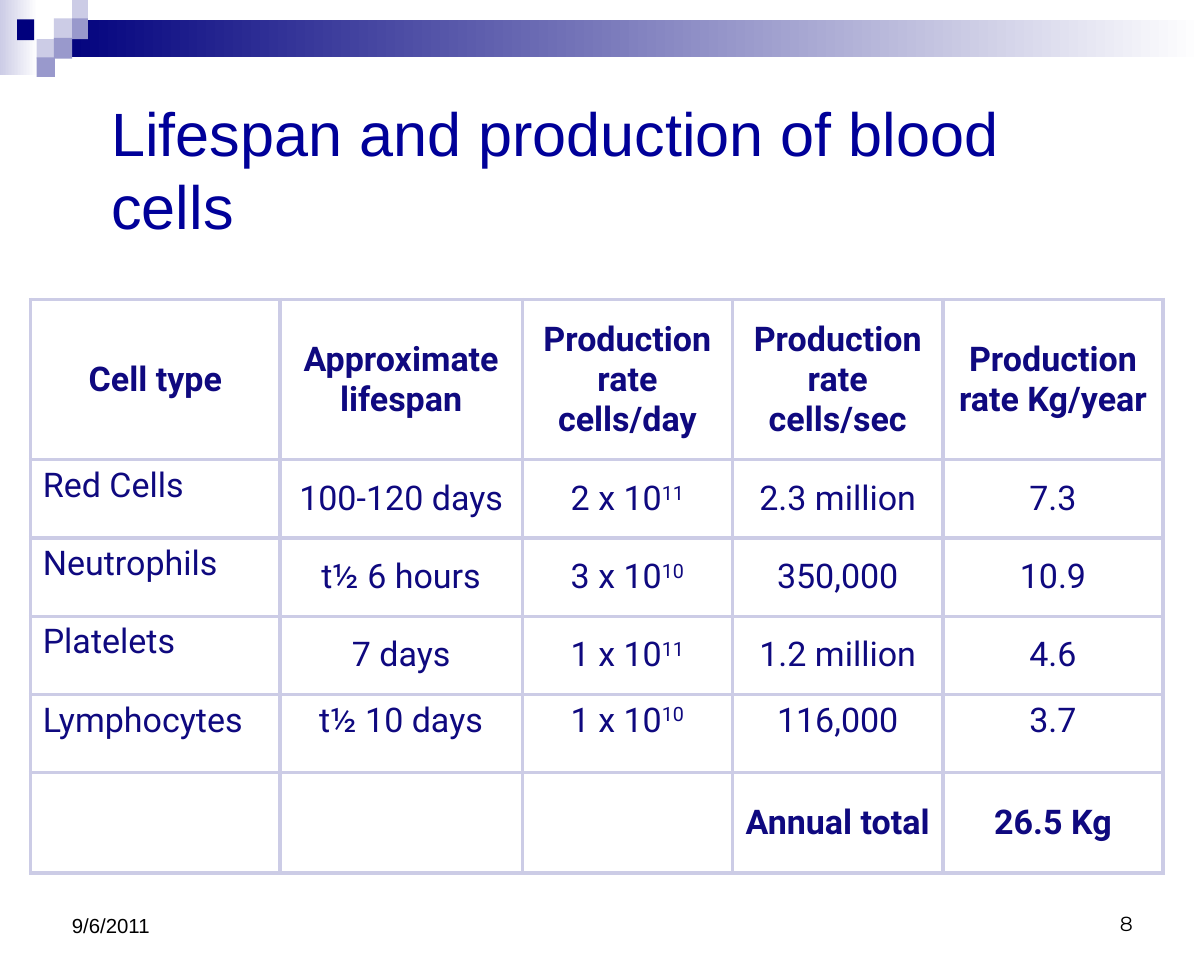
from typing import NamedTuple

from lxml.etree import SubElement
from pptx import Presentation
from pptx.dml.color import RGBColor
from pptx.enum.shapes import MSO_SHAPE as Shape
from pptx.enum.text import MSO_ANCHOR as Anchor, MSO_AUTO_SIZE as AutoSize, PP_ALIGN as Align
from pptx.oxml.ns import qn
from pptx.util import Inches, Pt

COLORS = {
    "navy": "00007D",
    "title": "000099",
    "table": "0F097F",
    "lilac": "CCCCE6",
    "violet": "9999CC",
    "white": "FFFFFF",
    "black": "000000",
}


class Block(NamedTuple):
    left: float
    top: float
    width: float
    height: float
    color: str
    fades: bool = False


class Footer(NamedTuple):
    text: str
    left: float
    top: float
    height: float
    font: str
    align: Align


BLOCKS = [
    Block(0, 0, 0.31, 0.61, "lilac", True),
    Block(0.44, 0.16, 9.4, 0.31, "navy", True),
    Block(0.44, 0.15, 0.15, 0.17, "lilac"),
    Block(0.59, 0, 0.13, 0.16, "lilac"),
    Block(0.59, 0.15, 0.13, 0.17, "violet"),
    Block(0.3, 0.32, 0.15, 0.16, "lilac"),
    Block(0.14, 0.16, 0.14, 0.17, "navy"),
    Block(0.44, 0.31, 0.15, 0.17, "violet"),
    Block(0.3, 0.47, 0.15, 0.16, "violet"),
]
FOOTERS = [
    Footer("8", 7.06, 7.18, 0.52, "Montserrat", Align.RIGHT),
    Footer("9/6/2011", 0.49, 7.17, 0.55, "Arial", Align.LEFT),
]
COLUMN_WIDTHS = [2.04, 1.98, 1.72, 1.72, 1.8]
ROW_HEIGHTS = [1.31, 0.64, 0.64, 0.64, 0.64, 0.82]
ROWS = [
    ["Cell type", "Approximate lifespan", "Production rate cells/day",
     "Production rate cells/sec", "Production rate Kg/year"],
    ["Red Cells", "100-120 days", "2 x 10^11", "2.3 million", "7.3"],
    ["Neutrophils", "t½ 6 hours", "3 x 10^10", "350,000", "10.9"],
    ["Platelets", "7 days", "1 x 10^11", "1.2 million", "4.6"],
    ["Lymphocytes", "t½ 10 days", "1 x 10^10", "116,000", "3.7"],
    ["", "", "", "Annual total", "26.5 Kg"],
]
HEADER_ROW, LYMPHOCYTE_ROW, TOTAL_ROW = 0, 4, 5


def rgb(name: str) -> RGBColor:
    return RGBColor.from_string(COLORS[name])


def write(holder, text: str, *, size: float, font: str, color: str,
          align=Align.LEFT, anchor=Anchor.TOP, bold: bool = False) -> None:
    holder.vertical_anchor = anchor
    holder.word_wrap = True
    frame = getattr(holder, "text_frame", holder)
    para = frame.paragraphs[0]
    para.alignment = align
    base, _, exponent = text.partition("^")
    for part in filter(None, (base, exponent)):
        span = para.add_run()
        span.text = part
        span.font.size = Pt(size)
        span.font.name = font
        span.font.bold = bold
        span.font.color.rgb = rgb(color)
    if exponent:
        span.font._element.set("baseline", "30000")


def draw_block(page, block: Block) -> None:
    box = page.shapes.add_shape(Shape.RECTANGLE, *map(Inches, block[:4]))
    box.shadow.inherit = False
    box.line.fill.background()
    if block.fades:
        box.fill.gradient()
        box.fill.gradient_angle = 0
        for stop, color in zip(box.fill.gradient_stops, (block.color, "white")):
            stop.color.rgb = rgb(color)
    else:
        box.fill.solid()
        box.fill.fore_color.rgb = rgb(block.color)


def draw_footer(page, footer: Footer) -> None:
    box = page.shapes.add_textbox(
        Inches(footer.left), Inches(footer.top), Inches(2.3), Inches(footer.height))
    write(box.text_frame, footer.text, size=12, font=footer.font, color="black",
          align=footer.align, anchor=Anchor.BOTTOM)


def draw_title(page, text: str) -> None:
    title = page.shapes.title
    title.left, title.top = Inches(0.81), Inches(0.84)
    title.width, title.height = Inches(8.39), Inches(1.08)
    title.text_frame.auto_size = AutoSize.NONE
    write(title.text_frame, text, size=36, font="Arial", color="title", anchor=Anchor.MIDDLE)


def add_borders(cell, color: str, width: float) -> None:
    properties = cell._tc.get_or_add_tcPr()
    for position, side in enumerate(("a:lnL", "a:lnR", "a:lnT", "a:lnB")):
        line = SubElement(properties, qn(side), w=str(Pt(width)))
        fill = SubElement(line, qn("a:solidFill"))
        SubElement(fill, qn("a:srgbClr"), val=COLORS[color])
        properties.remove(line)
        properties.insert(position, line)


def draw_table(page) -> None:
    table = page.shapes.add_table(
        len(ROWS), len(COLUMN_WIDTHS), Inches(0.25), Inches(2.45),
        Inches(sum(COLUMN_WIDTHS)), Inches(sum(ROW_HEIGHTS))).table
    table.horz_banding = False
    for column, width in zip(table.columns, COLUMN_WIDTHS):
        column.width = Inches(width)
    for row, height in zip(table.rows, ROW_HEIGHTS):
        row.height = Inches(height)
    for row, texts in enumerate(ROWS):
        emphasized = row in (HEADER_ROW, TOTAL_ROW)
        for column, text in enumerate(texts):
            cell = table.cell(row, column)
            cell.fill.background()
            add_borders(cell, "lilac", 2.25)
            is_label = column == 0 and not emphasized
            at_top = is_label or row == LYMPHOCYTE_ROW
            cell.vertical_anchor = Anchor.TOP if at_top else Anchor.MIDDLE
            write(cell.text_frame, text, size=20, font="Roboto", color="table",
                  align=Align.LEFT if is_label else Align.CENTER,
                  anchor=None, bold=emphasized)


def main() -> None:
    deck = Presentation()
    deck.slide_width, deck.slide_height = Inches(9 + 27 / 32), Inches(7 + 7 / 8)
    page = deck.slides.add_slide(deck.slide_layouts[5])
    page.background.fill.solid()
    page.background.fill.fore_color.rgb = rgb("white")
    for block in BLOCKS:
        draw_block(page, block)
    for footer in FOOTERS:
        draw_footer(page, footer)
    draw_title(page, "Lifespan and production of blood cells")
    draw_table(page)
    deck.save("out.pptx")


if __name__ == "__main__":
    main()
